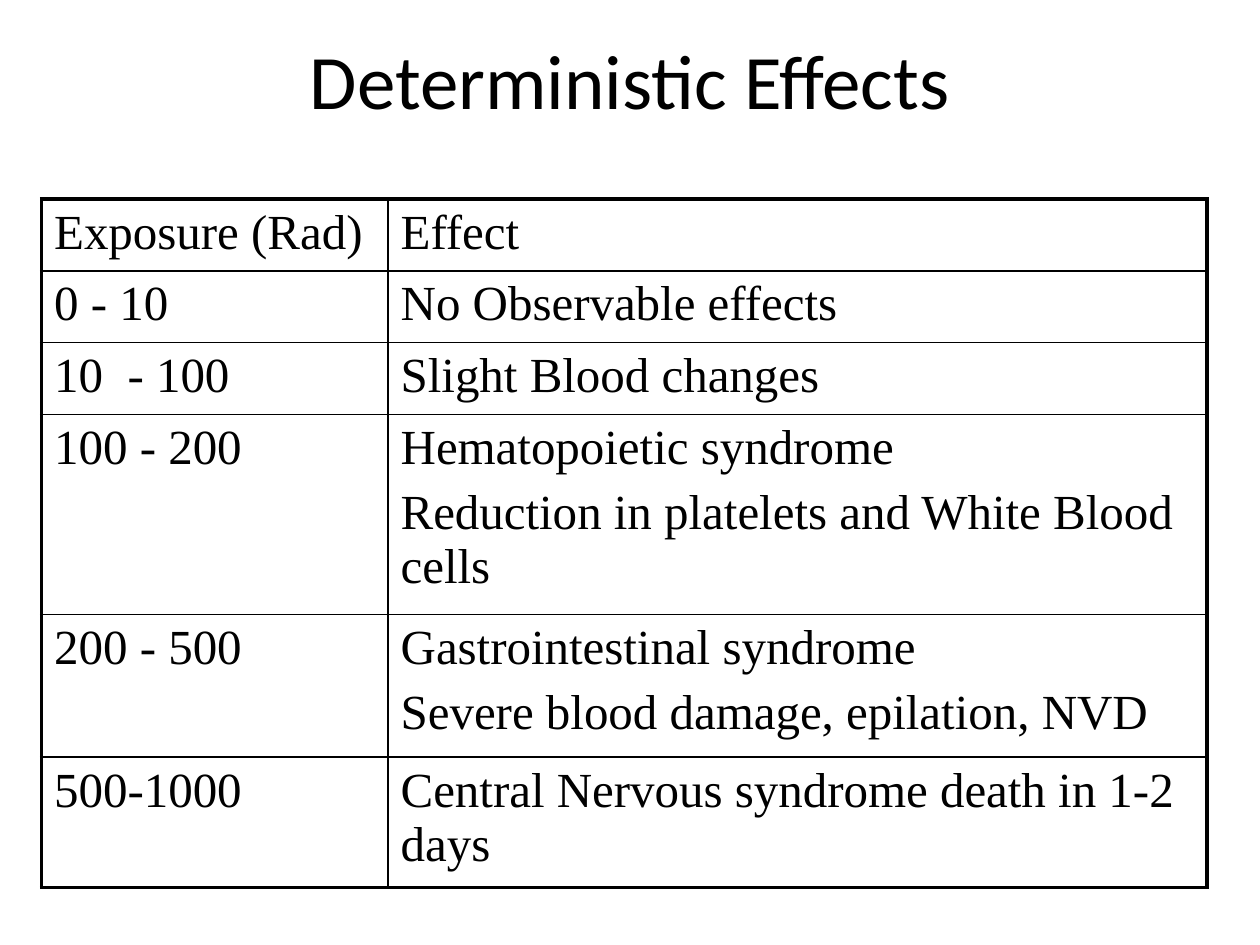
from lxml.etree import SubElement
from pptx import Presentation
from pptx.dml.color import RGBColor as Rgb
from pptx.enum.text import MSO_ANCHOR as Anchor, PP_ALIGN as Align
from pptx.oxml.ns import qn
from pptx.util import Inches, Pt

COLORS = {"ink": "000000", "paper": "FFFFFF"}
TITLE = {"name": "Calibri", "size": Pt(44)}
BODY = {"name": "Times New Roman", "size": Pt(28)}
COLUMN_WIDTHS = [2.75, 6.5]
ROW_HEIGHTS = [0.57, 0.57, 0.57, 1.59, 1.13, 1.03]
EXPOSURE_EFFECTS = [
    ("Exposure (Rad)", "Effect"),
    ("0 - 10", "No Observable effects"),
    ("10  - 100", "Slight Blood changes"),
    ("100 - 200", "Hematopoietic syndrome\nReduction in platelets and White Blood cells"),
    ("200 - 500", "Gastrointestinal syndrome\nSevere blood damage, epilation, NVD"),
    ("500-1000", "Central Nervous syndrome death in 1-2 days"),
]


class SlideBuilder:
    """Holds the style and the current slide, and adds each kind of element."""

    def __init__(self, slide, colors):
        self.slide = slide
        self.colors = colors

    def color(self, name):
        return Rgb.from_string(self.colors[name])

    def set_text(self, frame, text, style, align=Align.LEFT):
        frame.word_wrap = True
        frame.text = text
        for index, paragraph in enumerate(frame.paragraphs):
            paragraph.alignment = align
            if index:
                paragraph.space_before = Pt(6)
            for run in paragraph.runs:
                for attribute, value in style.items():
                    setattr(run.font, attribute, value)
                run.font.color.rgb = self.color("ink")

    def title(self, text, left, top, width, height):
        box = self.slide.shapes.add_textbox(*map(Inches, (left, top, width, height)))
        box.text_frame.vertical_anchor = Anchor.MIDDLE
        self.set_text(box.text_frame, text, TITLE, Align.CENTER)

    def border(self, cell, side, width):
        properties = cell._tc.get_or_add_tcPr()
        line = SubElement(properties, qn(f"a:ln{side}"), w=str(Pt(width)))
        fill = SubElement(line, qn("a:solidFill"))
        SubElement(fill, qn("a:srgbClr"), val=self.colors["ink"])

    def table(self, rows, left, top, widths, heights, outer=2.25, inner=1):
        last_row, last_column = len(heights) - 1, len(widths) - 1
        frame = self.slide.shapes.add_table(
            len(heights), len(widths), Inches(left), Inches(top),
            Inches(sum(widths)), Inches(sum(heights)))
        table = frame.table
        table.first_row = table.horz_banding = False
        for column, width in zip(table.columns, widths):
            column.width = Inches(width)
        for row, height in zip(table.rows, heights):
            row.height = Inches(height)
        for i, texts in enumerate(rows):
            for j, text in enumerate(texts):
                cell = table.cell(i, j)
                edges = {"L": j == 0, "R": j == last_column,
                         "T": i == 0, "B": i == last_row}
                for side, is_outer in edges.items():
                    self.border(cell, side, outer if is_outer else inner)
                cell.fill.solid()
                cell.fill.fore_color.rgb = self.color("paper")
                self.set_text(cell.text_frame, text, BODY)


def main():
    presentation = Presentation()
    presentation.slide_width = Inches(10)
    presentation.slide_height = Inches(7.5)
    slide = presentation.slides.add_slide(presentation.slide_layouts[6])
    builder = SlideBuilder(slide, COLORS)
    builder.title("Deterministic Effects", 0.75, 0, 8.5, 1.25)
    builder.table(EXPOSURE_EFFECTS, 0.33, 1.58, COLUMN_WIDTHS, ROW_HEIGHTS)
    presentation.save("out.pptx")


if __name__ == "__main__":
    main()
